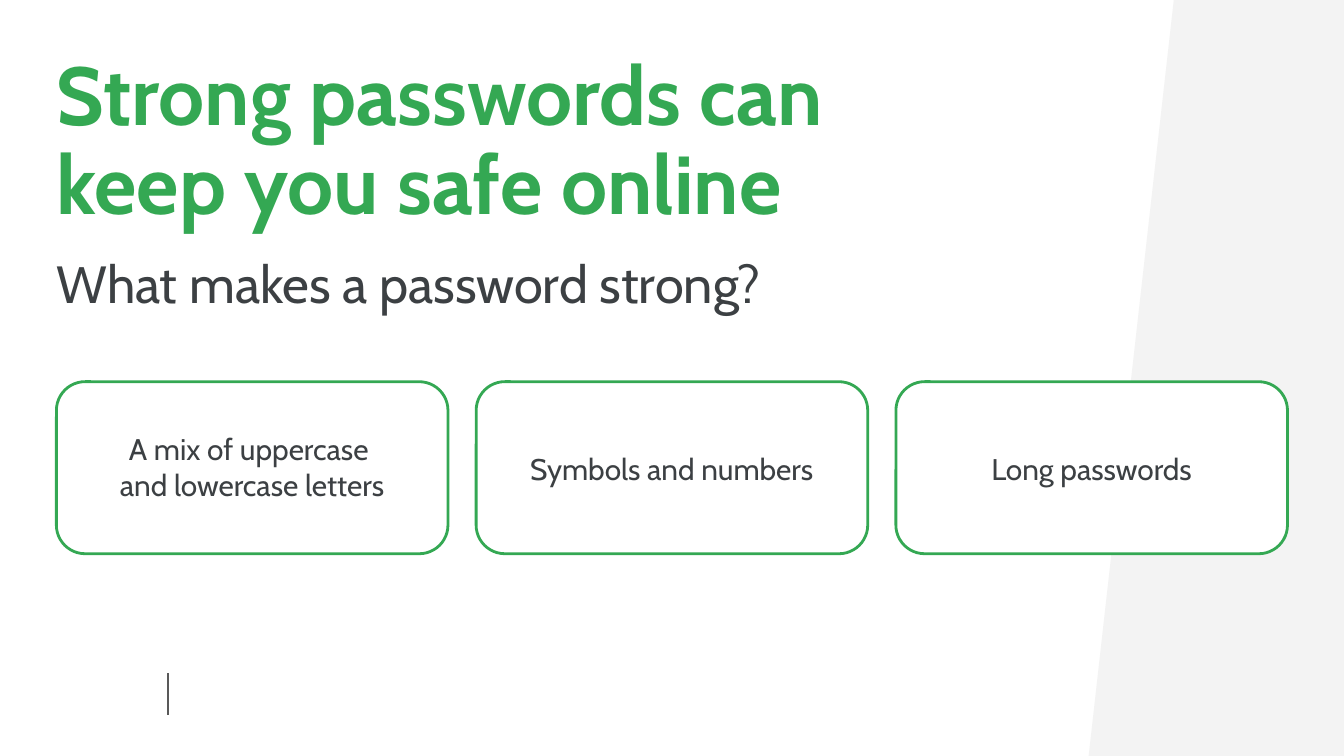
from pptx import Presentation
from pptx.dml.color import RGBColor
from pptx.enum.shapes import MSO_CONNECTOR, MSO_SHAPE
from pptx.enum.text import MSO_ANCHOR, PP_ALIGN
from pptx.util import Inches, Pt
from lxml import etree

STRAIGHT = MSO_CONNECTOR.STRAIGHT
ROUNDED = MSO_SHAPE.ROUNDED_RECTANGLE
TOP = MSO_ANCHOR.TOP
LEFT, CENTER = PP_ALIGN.LEFT, PP_ALIGN.CENTER
DRAWING_NS = "http://schemas.openxmlformats.org/drawingml/2006/main"

WIDTH = 10
HEIGHT = WIDTH * 9 / 16
MARGIN = 0.42
CONTENT_WIDTH = WIDTH - 2 * MARGIN
GAP = 0.21
FONT = "Cabin"
GREEN, INK, WHITE, PALE, RULE = "34A853", "3C4043", "FFFFFF", "F3F3F3", "595959"

# Text and top inset of each card
CARDS = [
    ("A mix of uppercase \vand lowercase letters", 0.3),
    ("Symbols and numbers", 0.45),
    ("Long passwords", 0.45),
]


def rgb(value):
    return RGBColor.from_string(value)


def write(frame, text, size, color, bold=False, align=LEFT, insets=(0, 0, 0, 0)):
    """Fill a text frame; insets run left, top, right, bottom in inches."""
    frame.word_wrap = True
    frame.vertical_anchor = TOP
    (frame.margin_left, frame.margin_top,
     frame.margin_right, frame.margin_bottom) = map(Inches, insets)
    frame.text = text
    paragraph = frame.paragraphs[0]
    paragraph.alignment = align
    for run in paragraph.runs:
        run.font.name = FONT
        run.font.size = Pt(size)
        run.font.bold = bold
        run.font.color.rgb = rgb(color)
    return paragraph


def add_side_panel(slide, left, top, width, height):
    """Slanted panel whose upper left corner is cut back by a third."""
    right, bottom = left + width, top + height
    builder = slide.shapes.build_freeform(
        Inches(right), Inches(bottom), scale=1.0)
    builder.add_line_segments(
        [(Inches(x), Inches(y)) for x, y in
         [(left, bottom), (left + 0.33 * width, top), (right, top)]])
    panel = builder.convert_to_shape()
    panel.shadow.inherit = False
    panel.fill.solid()
    panel.fill.fore_color.rgb = rgb(PALE)
    panel.line.fill.background()


def add_footer_rule(slide, x, top, height):
    rule = slide.shapes.add_connector(
        STRAIGHT, Inches(x), Inches(top), Inches(x), Inches(top + height))
    rule.line.color.rgb = rgb(RULE)
    rule.line.width = Pt(0.75)
    etree.SubElement(rule._element.spPr, f"{{{DRAWING_NS}}}effectLst")


def add_heading(slide, left, top, width, height):
    """Title in the upper three quarters, question in the rest."""
    title_height = 0.756 * height
    title = slide.shapes.add_textbox(
        Inches(left), Inches(top), Inches(width), Inches(title_height))
    paragraph = write(title.text_frame,
                      "Strong passwords can \vkeep you safe online",
                      44, GREEN, bold=True)
    paragraph.line_spacing = 0.9
    paragraph.space_after = Pt(10)
    question = slide.shapes.add_textbox(
        Inches(left), Inches(top + title_height),
        Inches(0.66 * width), Inches(height - title_height))
    write(question.text_frame, "What makes a password strong?", 28, INK)


def add_cards(slide, left, top, width, height):
    card_width = (width - GAP * (len(CARDS) - 1)) / len(CARDS)
    for column, (text, top_inset) in enumerate(CARDS):
        card = slide.shapes.add_shape(
            ROUNDED, Inches(left + column * (card_width + GAP)), Inches(top),
            Inches(card_width), Inches(height))
        card.shadow.inherit = False
        card.fill.solid()
        card.fill.fore_color.rgb = rgb(WHITE)
        card.line.color.rgb = rgb(GREEN)
        card.line.width = Pt(1.5)
        write(card.text_frame, text, 16, INK, align=CENTER,
              insets=(0.1, top_inset, 0.1, 0.1))


def main():
    deck = Presentation()
    deck.slide_width, deck.slide_height = Inches(WIDTH), Inches(HEIGHT)
    slide = deck.slides.add_slide(deck.slide_layouts[6])
    slide.background.fill.solid()
    slide.background.fill.fore_color.rgb = rgb(WHITE)
    add_footer_rule(slide, WIDTH / 8, 5.01, 0.31)
    add_side_panel(slide, 8.1, 0, 1.92, HEIGHT)
    add_cards(slide, MARGIN, 2.84, CONTENT_WIDTH, 1.28)
    add_heading(slide, MARGIN, 0.41, CONTENT_WIDTH, 1.93)
    deck.save("out.pptx")


if __name__ == "__main__":
    main()
